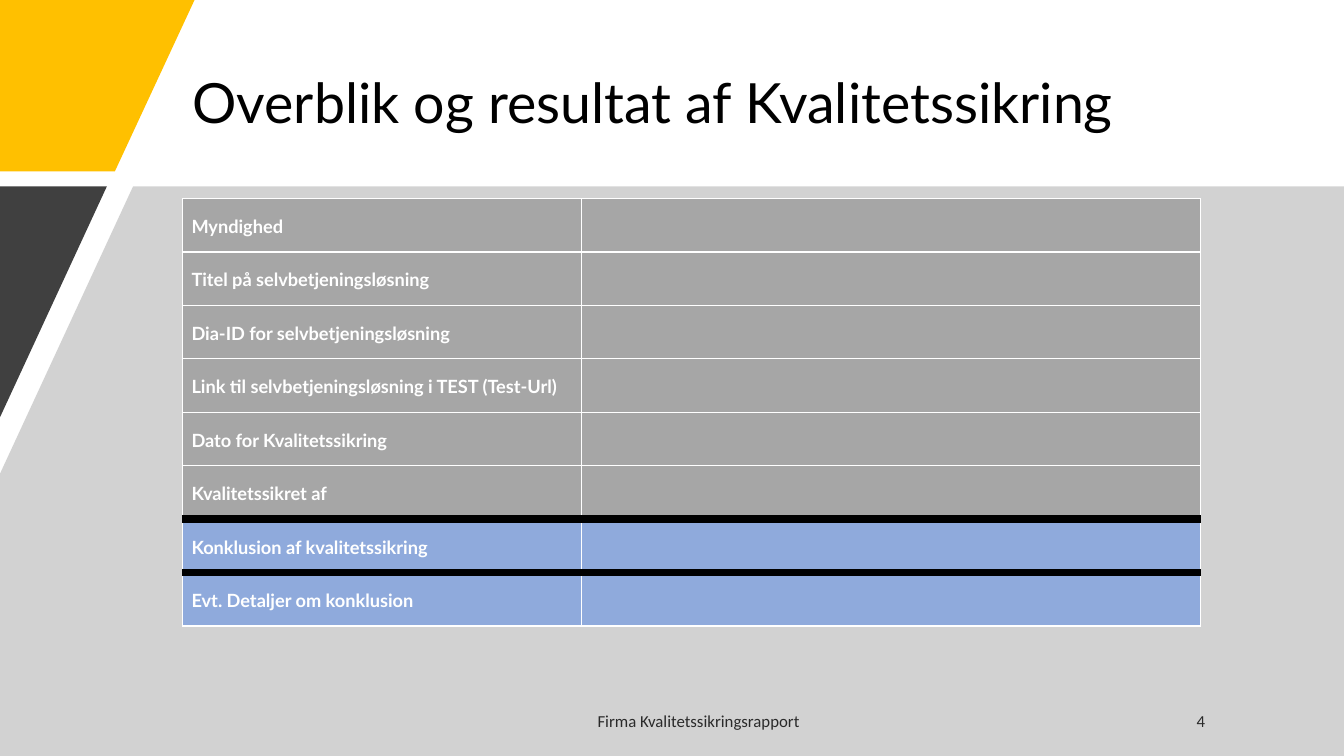
"""Builds the overview slide of a quality assurance report."""
from dataclasses import dataclass

from lxml.etree import SubElement
from pptx import Presentation
from pptx.dml.color import RGBColor
from pptx.dml.fill import FillFormat
from pptx.enum.text import MSO_ANCHOR, MSO_AUTO_SIZE, PP_ALIGN
from pptx.oxml.ns import qn
from pptx.slide import Slide
from pptx.table import _Cell
from pptx.text.text import _Paragraph
from pptx.util import Pt

PX = 9144
GREY, BLUE, WHITE, BLACK = "A6A6A6", "8FAADC", "FFFFFF", "000000"
TABLE_LEFT, TABLE_TOP, ROW_HEIGHT = 181, 197, 53
COLUMN_WIDTHS = (396, 614)
HEAVY_RULES = (6, 7)


@dataclass(frozen=True)
class Panel:
    points: tuple[tuple[int, int], ...]
    colour: str
    opacity: int = 100


@dataclass(frozen=True)
class FooterText:
    text: str
    left: int
    width: int
    align: PP_ALIGN
    space_after: int = 0


@dataclass(frozen=True)
class Field:
    label: str
    colour: str = GREY


PANELS = (
    Panel(((0, 0), (193, 0), (114, 170), (0, 170)), "FFC000"),
    Panel(((132, 185), (1333, 185), (1333, 750), (0, 750), (0, 470)), GREY, 50),
    Panel(((0, 185), (106, 185), (0, 414)), "404040"),
)
FOOTERS = (
    FooterText("Firma Kvalitetssikringsrapport", 468, 450, PP_ALIGN.CENTER),
    FooterText("4", 994, 211, PP_ALIGN.RIGHT, 6),
)
FIELDS = (
    Field("Myndighed"),
    Field("Titel på selvbetjeningsløsning"),
    Field("Dia-ID for selvbetjeningsløsning"),
    Field("Link til selvbetjeningsløsning i TEST (Test-Url)"),
    Field("Dato for Kvalitetssikring"),
    Field("Kvalitetssikret af"),
    Field("Konklusion af kvalitetssikring", BLUE),
    Field("Evt. Detaljer om konklusion", BLUE),
)


def paint(fill: FillFormat, colour: str) -> None:
    """Give a fill one solid colour."""
    fill.solid()
    fill.fore_color.rgb = RGBColor.from_string(colour)


def fade(parent, opacity: int) -> None:
    """Set the opacity, in percent, of the solid colour inside an element."""
    colour = parent.find(f"{qn('a:solidFill')}/{qn('a:srgbClr')}")
    SubElement(colour, qn("a:alpha"), val=str(opacity * 1000))


def style(paragraph: _Paragraph, font: str, size: float, colour: str) -> None:
    """Set the font, size and colour of a paragraph."""
    paragraph.font.name = font
    paragraph.font.size = Pt(size)
    paint(paragraph.font.fill, colour)


def draw_panel(slide: Slide, panel: Panel) -> None:
    """Draw one slanted background panel."""
    start, *corners = panel.points
    builder = slide.shapes.build_freeform(*start, scale=PX)
    builder.add_line_segments(corners, close=True)
    shape = builder.convert_to_shape()
    shape.shadow.inherit = False
    shape.line.fill.background()
    paint(shape.fill, panel.colour)
    if panel.opacity < 100:
        fade(shape.element.spPr, panel.opacity)


def write_title(slide: Slide, text: str) -> None:
    """Place and fill the title placeholder."""
    title = slide.shapes.title
    title.left, title.top, title.width, title.height = (
        length * PX for length in (181, 40, 1024, 130)
    )
    frame = title.text_frame
    frame.text = text
    frame.auto_size = MSO_AUTO_SIZE.NONE
    frame.vertical_anchor = MSO_ANCHOR.MIDDLE
    heading = frame.paragraphs[0]
    heading.alignment = PP_ALIGN.LEFT
    heading.line_spacing = 0.9
    style(heading, "Lato", 39.6, BLACK)


def write_footer(slide: Slide, footer: FooterText) -> None:
    """Write one text in the footer row."""
    box = slide.shapes.add_textbox(footer.left * PX, 695 * PX, footer.width * PX, 40 * PX)
    frame = box.text_frame
    frame.word_wrap = True
    frame.vertical_anchor = MSO_ANCHOR.MIDDLE
    frame.text = footer.text
    line = frame.paragraphs[0]
    line.alignment = footer.align
    line.space_after = Pt(footer.space_after)
    style(line, "Calibri", 12, BLACK)
    fade(line.font.fill._xPr, 80)


def draw_border(cell: _Cell, side: str, heavy: bool) -> None:
    """Draw one cell border, thin white or heavy black."""
    properties = cell._tc.get_or_add_tcPr()
    border = SubElement(properties, qn(f"a:ln{side}"), w=str(Pt(6 if heavy else 1)))
    solid = SubElement(border, qn("a:solidFill"))
    SubElement(solid, qn("a:srgbClr"), val=BLACK if heavy else WHITE)


def format_cell(cell: _Cell, row: int, colour: str) -> None:
    """Set the borders, margins and fill of a cell."""
    for side in "LR":
        draw_border(cell, side, False)
    draw_border(cell, "T", row in HEAVY_RULES)
    draw_border(cell, "B", row + 1 in HEAVY_RULES)
    cell.margin_left = cell.margin_right = 9 * PX
    cell.margin_top, cell.margin_bottom = 6 * PX, 0
    paint(cell.fill, colour)


def draw_overview(slide: Slide) -> None:
    """Draw the table with one row per field."""
    overview = slide.shapes.add_table(
        len(FIELDS), len(COLUMN_WIDTHS), TABLE_LEFT * PX, TABLE_TOP * PX,
        sum(COLUMN_WIDTHS) * PX, len(FIELDS) * ROW_HEIGHT * PX,
    ).table
    overview.first_row = overview.horz_banding = False
    for column, width in zip(overview.columns, COLUMN_WIDTHS):
        column.width = width * PX
    for row, field in enumerate(FIELDS):
        overview.rows[row].height = ROW_HEIGHT * PX
        for cell in overview.rows[row].cells:
            format_cell(cell, row, field.colour)
        label_cell = overview.cell(row, 0)
        label_cell.text = field.label
        label = label_cell.text_frame.paragraphs[0]
        label.line_spacing = 1.5
        label.space_before = Pt(12)
        label.font.bold = True
        style(label, "Lato", 13, WHITE)


def main() -> None:
    """Build and save the slide."""
    presentation = Presentation()
    presentation.slide_width, presentation.slide_height = 1333 * PX, 750 * PX
    slide = presentation.slides.add_slide(presentation.slide_layouts[5])
    paint(slide.background.fill, WHITE)
    for panel in PANELS:
        draw_panel(slide, panel)
    write_title(slide, "Overblik og resultat af Kvalitetssikring")
    for footer in FOOTERS:
        write_footer(slide, footer)
    draw_overview(slide)
    presentation.save("out.pptx")


if __name__ == "__main__":
    main()
